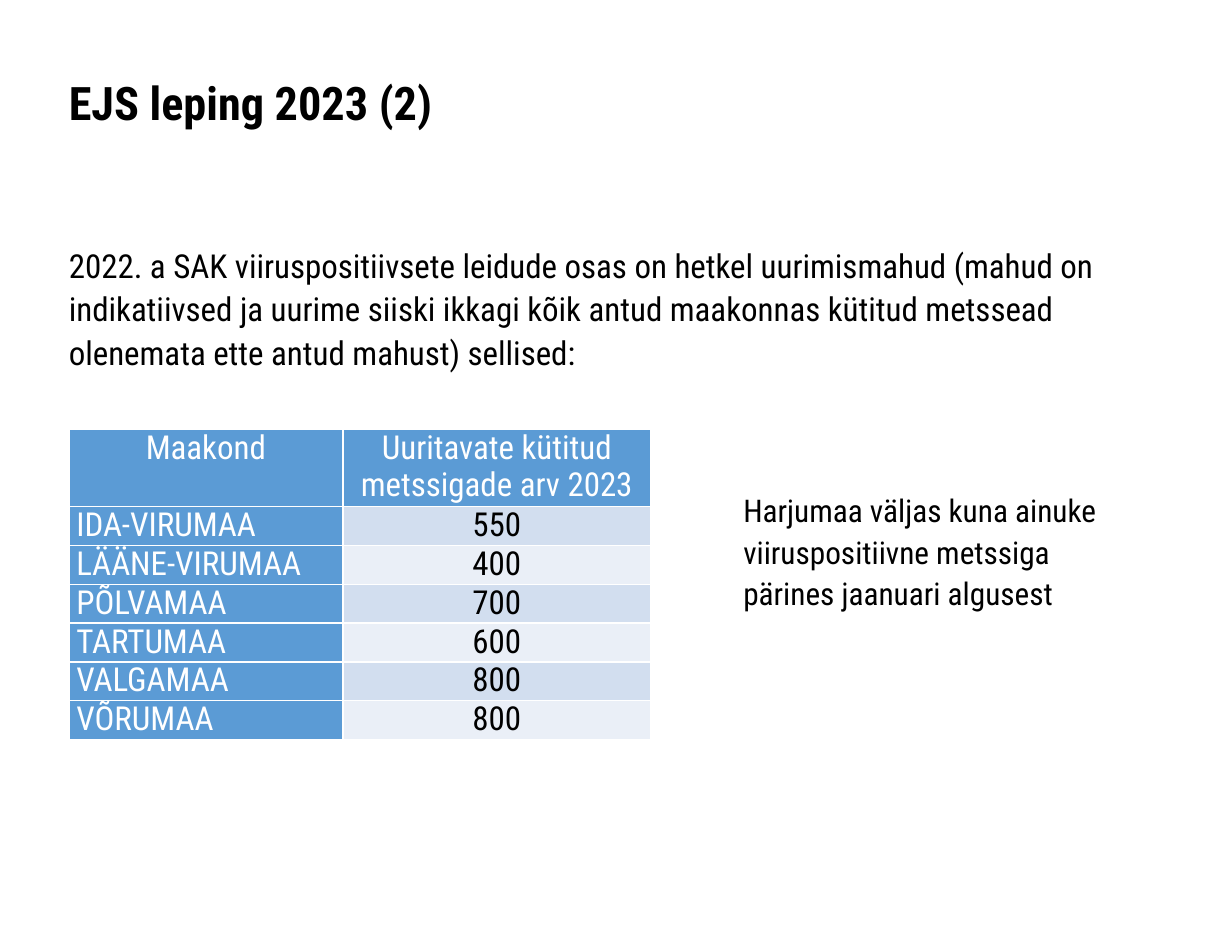
from lxml import etree
from pptx import Presentation
from pptx.dml.color import RGBColor
from pptx.enum import text
from pptx.oxml import ns
from pptx.util import Cm, Inches, Pt

FONT = "Roboto Condensed"
COLORS = {"ink": "000000", "paper": "FFFFFF", "head": "5B9BD5",
          "odd": "D2DEEF", "even": "EAEFF7"}
HEADINGS = ("Maakond", "Uuritavate kütitud metssigade arv 2023")
COUNTIES = [("IDA-VIRUMAA", 550), ("LÄÄNE-VIRUMAA", 400), ("PÕLVAMAA", 700),
            ("TARTUMAA", 600), ("VALGAMAA", 800), ("VÕRUMAA", 800)]


def rgb(name):
    """Return the named colour."""
    return RGBColor.from_string(COLORS[name])


def write(frame, words, size, color="ink", bold=False, spacing=1.1,
          align=text.PP_ALIGN.LEFT):
    """Write one styled paragraph into a text frame."""
    frame.word_wrap = True
    paragraph = frame.paragraphs[0]
    paragraph.text = words
    paragraph.alignment = align
    paragraph.line_spacing = spacing
    font = paragraph.font
    font.name, font.size, font.bold = FONT, Pt(size), bold
    font.color.rgb = rgb(color)


def add_text(slide, box, words, size, insets=(0, 0, 0, 0), **style):
    """Add a text box with left, top, right and bottom insets."""
    frame = slide.shapes.add_textbox(*map(Inches, box)).text_frame
    (frame.margin_left, frame.margin_top,
     frame.margin_right, frame.margin_bottom) = map(Inches, insets)
    write(frame, words, size, **style)


def add_borders(cell):
    """Draw thin white lines on all sides of a cell."""
    properties = cell._tc.get_or_add_tcPr()
    for index, side in enumerate(("lnL", "lnR", "lnT", "lnB")):
        line = etree.Element(ns.qn(f"a:{side}"), w=str(Pt(1)))
        fill = etree.SubElement(line, ns.qn("a:solidFill"))
        etree.SubElement(fill, ns.qn("a:srgbClr"), val=COLORS["paper"])
        properties.insert(index, line)


def fill_cell(cell, words, fill, color, align):
    """Fill, border and label one table cell."""
    cell.margin_left = cell.margin_right = Inches(0.06)
    cell.margin_top = cell.margin_bottom = 0
    cell.fill.solid()
    cell.fill.fore_color.rgb = rgb(fill)
    add_borders(cell)
    write(cell.text_frame, words, 19, color, spacing=0.97, align=align)


def add_county_table(slide):
    """Add the table of wild boar counts by county."""
    row_height = 0.31
    lines = len(COUNTIES) + 2
    table = slide.shapes.add_table(
        len(COUNTIES) + 1, 2, Inches(0.55), Inches(3.43),
        Inches(4.65), Inches(row_height * lines)).table
    for column, width in zip(table.columns, (2.19, 2.46)):
        column.width = Inches(width)
    for index, row in enumerate(table.rows):
        row.height = Inches(row_height * (1 if index else 2))
    center, justify = text.PP_ALIGN.CENTER, text.PP_ALIGN.JUSTIFY
    for column, heading in enumerate(HEADINGS):
        fill_cell(table.cell(0, column), heading, "head", "paper", center)
    for row, (county, count) in enumerate(COUNTIES, 1):
        band = "odd" if row % 2 else "even"
        fill_cell(table.cell(row, 0), county, "head", "paper", justify)
        fill_cell(table.cell(row, 1), str(count), band, "ink", center)


def main():
    """Build and save the slide."""
    deck = Presentation()
    deck.slide_width = Cm(25)
    deck.slide_height = Cm(19)
    slide = deck.slides.add_slide(deck.slide_layouts[6])
    add_text(slide, (0.55, 0.59, 8.66, 1.18), "EJS leping 2023 (2)", 26.6,
             insets=(0, 0.06, 0, 0), bold=True, spacing=0.88)
    add_text(slide, (0.55, 1.93, 8.66, 4.94),
             "2022. a SAK viiruspositiivsete leidude osas on hetkel "
             "uurimismahud (mahud on indikatiivsed ja uurime siiski ikkagi "
             "kõik antud maakonnas kütitud metssead olenemata ette antud "
             "mahust) sellised:", 19)
    add_county_table(slide)
    add_text(slide, (5.84, 3.85, 3.34, 1.1),
             "Harjumaa väljas kuna ainuke viiruspositiivne metssiga "
             "pärines jaanuari algusest", 18,
             insets=(0.1, 0.05, 0.1, 0.05))
    deck.save("out.pptx")


if __name__ == "__main__":
    main()
